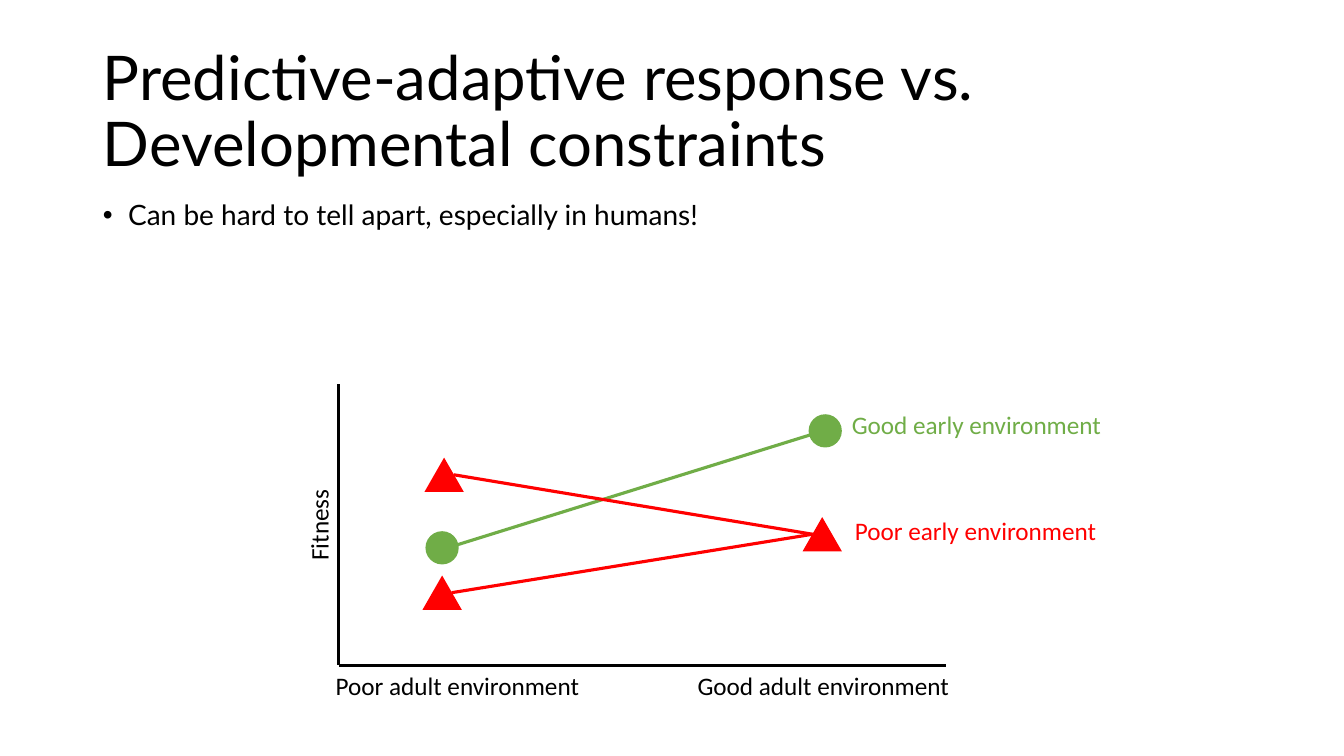
import pptx
import pptx.util
import pptx.dml.color
import pptx.enum.shapes
import pptx.enum.text
import pptx.oxml.ns
from lxml import etree

Inches, Pt = pptx.util.Inches, pptx.util.Pt
SHAPE = pptx.enum.shapes.MSO_SHAPE
BLACK, GREEN, RED = "000000", "70AD47", "FF0000"


def rgb(value):
    return pptx.dml.color.RGBColor.from_string(value)


class SlideBuilder:
    heading_font, label_font = "Lato", "Calibri"
    label_size, line_width = 18, 2.25

    def __init__(self, slide):
        self.s = slide

    def style(self, p, font, size, color):
        p.font.name, p.font.size = font, Pt(size)
        p.font.color.rgb = rgb(color)

    def placeholder(self, sp, box, text, size, anchor, before=0):
        sp.left, sp.top, sp.width, sp.height = map(Inches, box)
        tf = sp.text_frame
        tf.text = text
        tf.vertical_anchor = anchor
        tf.auto_size = pptx.enum.text.MSO_AUTO_SIZE.NONE
        p = tf.paragraphs[0]
        p.alignment = pptx.enum.text.PP_ALIGN.LEFT
        p.line_spacing, p.space_before = 0.9, Pt(before)
        self.style(p, self.heading_font, size, BLACK)
        return p

    def bullet(self, p, indent):
        pPr = p._p.get_or_add_pPr()
        pPr.set("marL", str(Inches(indent)))
        pPr.set("indent", str(-Inches(indent)))

    def label(self, x, y, w, text, color=BLACK, rotation=0):
        sp = self.s.shapes.add_textbox(Inches(x), Inches(y), Inches(w), Inches(0.4))
        sp.rotation = rotation
        tf = sp.text_frame
        tf.text = text
        tf.word_wrap = False
        tf.auto_size = pptx.enum.text.MSO_AUTO_SIZE.SHAPE_TO_FIT_TEXT
        self.style(tf.paragraphs[0], self.label_font, self.label_size, color)

    def marker(self, kind, x, y, w, h, color):
        sp = self.s.shapes.add_shape(kind, Inches(x), Inches(y), Inches(w), Inches(h))
        sp.shadow.inherit = False
        sp.fill.solid()
        sp.fill.fore_color.rgb = rgb(color)
        sp.line.fill.background()

    def line(self, start, end, color=BLACK):
        c = self.s.shapes.add_connector(
            pptx.enum.shapes.MSO_CONNECTOR.STRAIGHT, *map(Inches, start + end))
        c.line.color.rgb = rgb(color)
        c.line.width = Pt(self.line_width)
        etree.SubElement(c._element.spPr, pptx.oxml.ns.qn("a:effectLst"))


def main():
    prs = pptx.Presentation()
    prs.slide_width, prs.slide_height = Inches(13.33), Inches(7.5)
    s = prs.slides.add_slide(prs.slide_layouts[1])
    b = SlideBuilder(s)
    anchor = pptx.enum.text.MSO_ANCHOR

    # Title and bullet
    b.placeholder(s.shapes.title, (0.92, 0.4, 12.17, 1.45),
                  "Predictive-adaptive response vs. Developmental constraints",
                  44, anchor.MIDDLE)
    p = b.placeholder(s.placeholders[1], (0.92, 1.95, 12.17, 2.57),
                      "Can be hard to tell apart, especially in humans!",
                      20, anchor.TOP, before=10)
    b.bullet(p, 0.25)

    # Axes and their labels
    origin = (3.36, 6.6)
    b.line((3.36, 3.81), origin)
    b.line((9.38, 6.6), origin)
    b.label(3.23, 6.6, 2.65, "Poor adult environment")
    b.label(6.82, 6.6, 2.73, "Good adult environment")
    b.label(2.7, 5, 0.92, "Fitness", rotation=270)

    # Good early environment
    for x, y in ((4.22, 5.27), (8.02, 4.11)):
        b.marker(SHAPE.OVAL, x, y, 0.33, 0.33, GREEN)
    b.line((4.39, 5.45), (8.18, 4.27), GREEN)
    b.label(8.35, 4.01, 2.7, "Good early environment", GREEN)

    # Poor early environment: two starts, one shared end
    for x, y in ((4.19, 5.71), (7.96, 5.13), (4.21, 4.54)):
        b.marker(SHAPE.ISOSCELES_TRIANGLE, x, y, 0.39, 0.34, RED)
    for start in ((4.48, 5.88), (4.5, 4.71)):
        b.line(start, (8.06, 5.3), RED)
    b.label(8.38, 5.06, 2.62, "Poor early environment", RED)

    prs.save("out.pptx")


if __name__ == "__main__":
    main()
